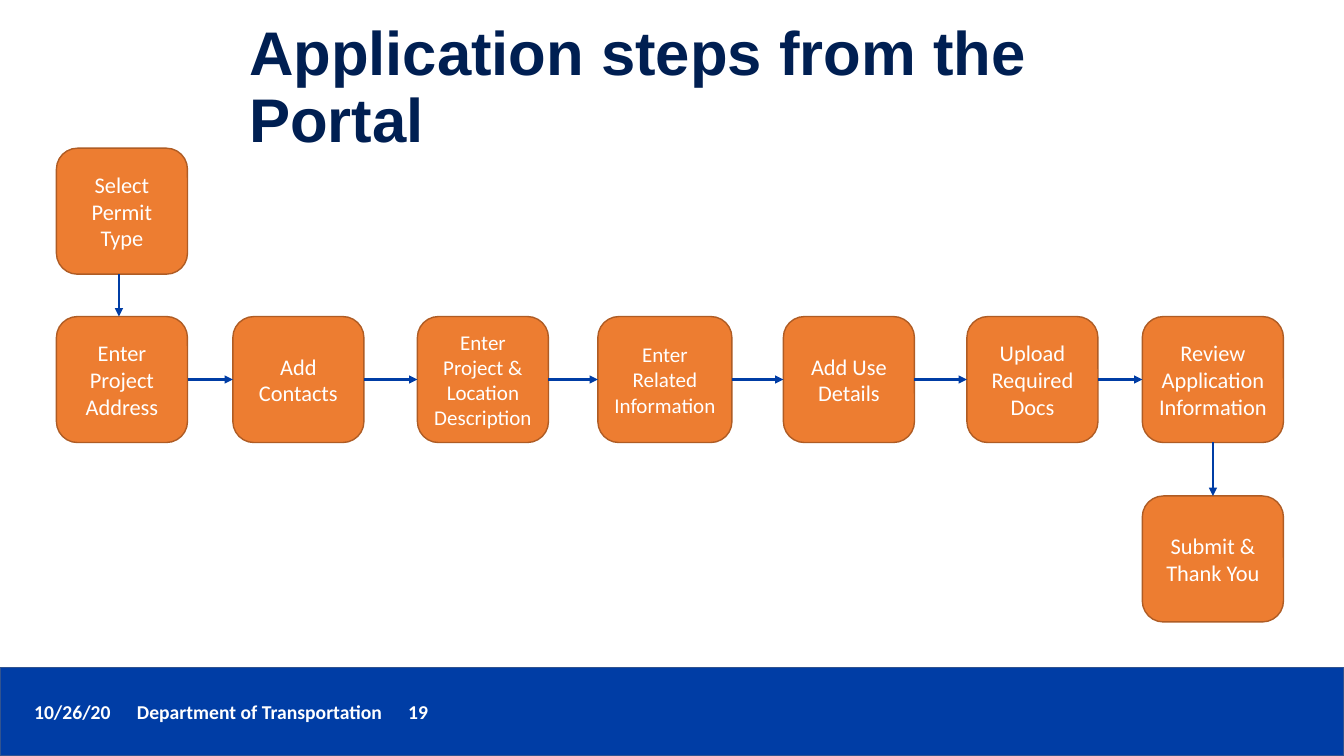
import pptx
import pptx.util
from lxml import etree
from pptx.dml.color import RGBColor
from pptx.enum.shapes import MSO_CONNECTOR, MSO_SHAPE
from pptx.enum.text import MSO_ANCHOR, PP_ALIGN
from pptx.oxml.ns import qn
from pptx.util import Inches, Pt

COLORS = {
    "blue": "003DA5",
    "bar_line": "31538F",
    "navy": "001F52",
    "orange": "ED7D31",
    "box_line": "AF5C24",
    "white": "FFFFFF",
}
ROW_TOP, BOX_HEIGHT = 3.14, 1.25

# left, top, width, font size, paragraphs
FIRST_STEP = (0.56, 1.47, 1.3, 16, ["Select Permit Type"])
ROW_STEPS = [
    (0.56, ROW_TOP, 1.3, 16, ["Enter", "Project Address"]),
    (2.31, ROW_TOP, 1.3, 16, ["Add Contacts"]),
    (4.14, ROW_TOP, 1.3, 15, ["Enter Project & Location Description"]),
    (5.93, ROW_TOP, 1.33, 15, ["Enter Related Information"]),
    (7.77, ROW_TOP, 1.3, 16, ["Add Use Details"]),
    (9.59, ROW_TOP, 1.3, 16, ["Upload Required Docs"]),
    (11.33, ROW_TOP, 1.4, 16, ["Review Application Information"]),
]
LAST_STEP = (11.33, 4.92, 1.4, 16, ["Submit & Thank You"])


def rgb(name):
    return RGBColor.from_string(COLORS[name])


def set_font(p, name, size, color, bold=False):
    p.font.name = name
    p.font.size = Pt(size)
    p.font.bold = bold
    p.font.color.rgb = rgb(color)


def add_title(s, text):
    title = s.shapes.title
    title.left, title.top = Inches(2.37), Inches(0.16)
    title.width, title.height = Inches(8.59), Inches(1.45)
    tf = title.text_frame
    tf.text = text
    tf.word_wrap = True
    tf.vertical_anchor = MSO_ANCHOR.MIDDLE
    p = tf.paragraphs[0]
    p.alignment = PP_ALIGN.LEFT
    p.line_spacing = 0.9
    set_font(p, "Arial", 44, "navy", bold=True)


def add_box(s, preset, left, top, width, height, fill, line):
    sp = s.shapes.add_shape(
        preset, Inches(left), Inches(top), Inches(width), Inches(height))
    sp.shadow.inherit = False
    sp.fill.solid()
    sp.fill.fore_color.rgb = rgb(fill)
    sp.line.color.rgb = rgb(line)
    sp.line.width = Pt(1)
    return sp


def add_footer(s, parts, tab_stops):
    """Draw the bottom bar and its text, spaced by tab stops in inches."""
    add_box(s, MSO_SHAPE.RECTANGLE, 0, 6.62, 13.33, 0.88, "blue", "bar_line")
    tb = s.shapes.add_textbox(
        Inches(0.24), Inches(6.89), Inches(10.06), Inches(0.34))
    tf = tb.text_frame
    tf.word_wrap = True
    p = tf.paragraphs[0]
    p.text = "\t".join(parts)
    set_font(p, "Calibri", 14, "white", bold=True)
    pPr = p._p.get_or_add_pPr()
    tabs = etree.Element(qn("a:tabLst"))
    pPr.insert(0, tabs)
    for stop in tab_stops:
        etree.SubElement(tabs, qn("a:tab"), pos=str(Inches(stop)), algn="l")


def add_step(s, left, top, width, size, paragraphs):
    sp = add_box(s, MSO_SHAPE.ROUNDED_RECTANGLE, left, top, width, BOX_HEIGHT,
                 "orange", "box_line")
    tf = sp.text_frame
    tf.word_wrap = True
    tf.vertical_anchor = MSO_ANCHOR.MIDDLE
    tf.text = "\n".join(paragraphs)
    for p in tf.paragraphs:
        p.alignment = PP_ALIGN.CENTER
        set_font(p, "Calibri", size, "white")


def add_arrow(s, x1, y1, x2, y2):
    c = s.shapes.add_connector(
        MSO_CONNECTOR.STRAIGHT, Inches(x1), Inches(y1), Inches(x2), Inches(y2))
    c.line.color.rgb = rgb("blue")
    c.line.width = Pt(1.5)
    etree.SubElement(c.line._get_or_add_ln(), qn("a:tailEnd"), type="triangle")
    etree.SubElement(c._element.spPr, qn("a:effectLst"))


def main():
    prs = pptx.Presentation()
    prs.slide_width, prs.slide_height = Inches(13.33), Inches(7.5)
    s = prs.slides.add_slide(prs.slide_layouts[5])

    add_footer(s, ["10/26/20", "Department of Transportation", "19"],
               [1.02, 3.71])
    add_title(s, "Application steps from the Portal")

    for step in [*ROW_STEPS, FIRST_STEP, LAST_STEP]:
        add_step(s, *step)

    add_arrow(s, 1.18, FIRST_STEP[1] + BOX_HEIGHT, 1.18, ROW_TOP)
    row_middle = ROW_TOP + BOX_HEIGHT / 2
    for (left, _, width, *_), (next_left, *_) in zip(ROW_STEPS, ROW_STEPS[1:]):
        add_arrow(s, left + width, row_middle, next_left, row_middle)
    last_middle = LAST_STEP[0] + LAST_STEP[2] / 2
    add_arrow(s, last_middle, ROW_TOP + BOX_HEIGHT, last_middle, LAST_STEP[1])

    prs.save("out.pptx")


if __name__ == "__main__":
    main()
